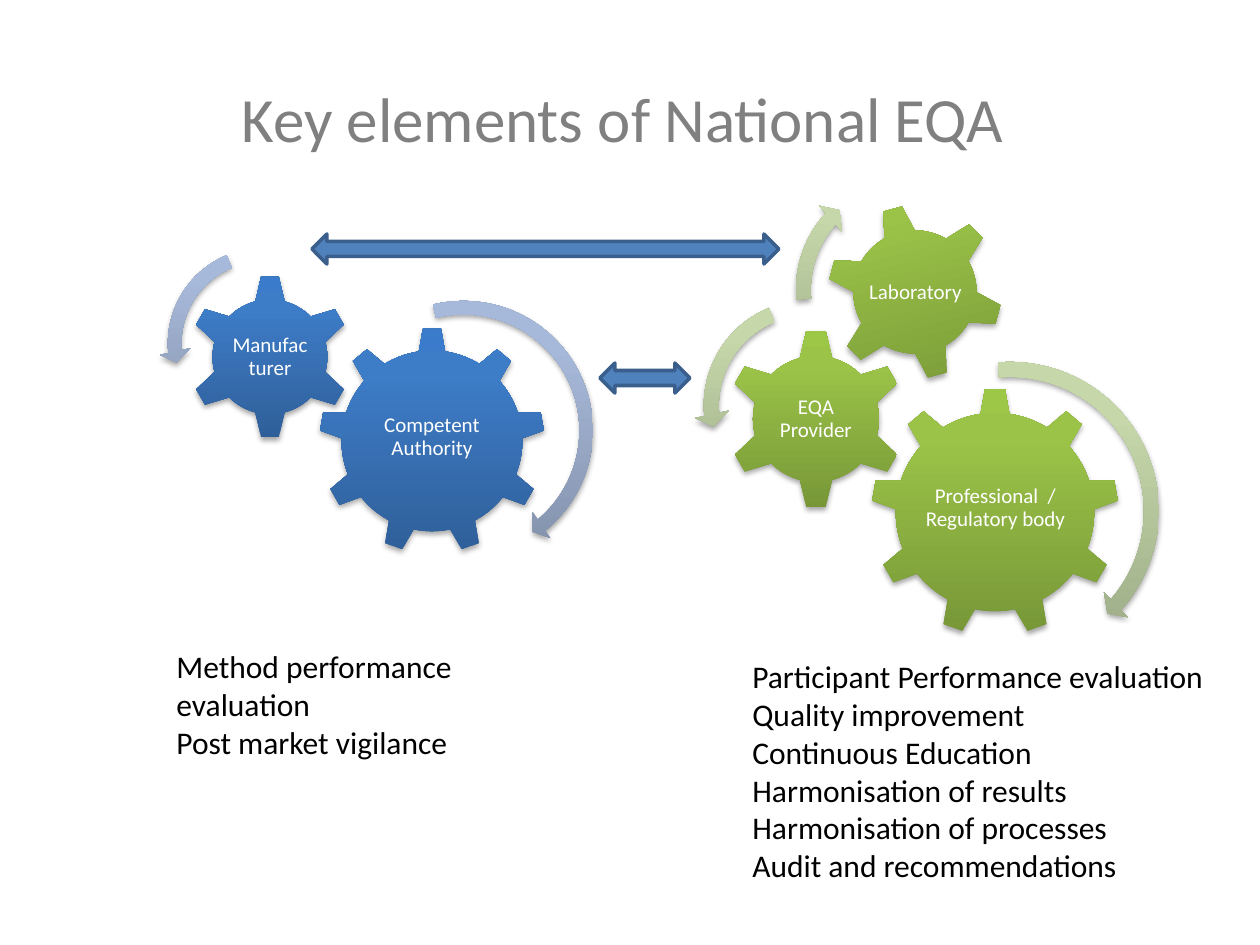
import copy

import pptx
import pptx.dml.color
import pptx.enum.shapes
import pptx.enum.text
import pptx.oxml
import pptx.oxml.ns
import pptx.util

SHAPES = pptx.enum.shapes.MSO_SHAPE
ALIGN = pptx.enum.text.PP_ALIGN
ANCHOR = pptx.enum.text.MSO_ANCHOR
PX_PER_INCH = 126

# Gradient colours from bottom to top, at STOPS
STOPS = (0, 0.8, 1)
GREEN, PALE_GREEN = ("779737", "9BC348", "9DC746"), ("98A683", "C6D8AA", "C7DAAA")
BLUE, PALE_BLUE = ("2F5F99", "3D7CC7", "3A7CCB"), ("818FA8", "A7B9DA", "A7BADC")

# Label area as fractions of the gear: left, top, width, height
NINE_TEETH = (0.2, 0.23, 0.6, 0.51)
SIX_TEETH = (0.25, 0.25, 0.5, 0.5)
TILTED = (0.22, 0.22, 0.56, 0.56)

# Left, top, size, preset, rotation, label area, label
GREEN_GEARS = [
    (871, 388, 248, SHAPES.GEAR_9, 0, NINE_TEETH, "Professional  / Regulatory body"),
    (726, 329, 180, SHAPES.GEAR_6, 0, SIX_TEETH, "EQA Provider"),
    (827, 204, 176, SHAPES.GEAR_6, 345, TILTED, "Laboratory"),
]
BLUE_GEARS = [
    (319, 328, 226, SHAPES.GEAR_9, 0, NINE_TEETH, "Competent Authority"),
    (188, 275, 164, SHAPES.GEAR_6, 0, SIX_TEETH, "Manufacturer"),
]

# Left, top, size, preset, thickness, head angle, end, start, head width
# (angles in degrees)
GREEN_TURNS = [
    (851, 352, 318, SHAPES.CIRCULAR_ARROW, 0.047, 4.98, 41.49, 265.34, 0.055),
    (694, 290, 231, SHAPES.LEFT_CIRCULAR_ARROW, 0.065, 7.17, 174.82, 247.3, 0.075),
    (786, 166, 248, SHAPES.CIRCULAR_ARROW, 0.06, 6.57, 221.9, 175.14, 0.07),
]
BLUE_TURNS = [
    (325, 292, 277, SHAPES.CIRCULAR_ARROW, 0.049, 5.21, 50.53, 256.33, 0.057),
    (159, 239, 209, SHAPES.LEFT_CIRCULAR_ARROW, 0.065, 7.17, 174.82, 247.3, 0.075),
]


def px(length):
    return round(length * 914400 / PX_PER_INCH)


def colour(code):
    return pptx.dml.color.RGBColor.from_string(code)


def add_text(page, area, lines, size, code, align=ALIGN.LEFT, anchor=ANCHOR.TOP,
             inset=None, spacing=None):
    box = page.shapes.add_textbox(*map(px, area))
    frame = box.text_frame
    frame.word_wrap = True
    frame.vertical_anchor = anchor
    if inset is not None:
        frame.margin_left = frame.margin_right = px(inset)
        frame.margin_top = frame.margin_bottom = px(inset)
    frame.text = "\n".join(lines)
    for para in frame.paragraphs:
        para.alignment = align
        para.line_spacing = spacing
        para.font.name = "Calibri"
        para.font.size = pptx.util.Pt(size)
        para.font.color.rgb = colour(code)


def add_shaded(page, preset, left, top, size, codes):
    """Add a square shape with a three-stop gradient and a soft shadow."""
    shape = page.shapes.add_shape(preset, px(left), px(top), px(size), px(size))
    shape.line.fill.background()
    shape.fill.gradient()
    shape.fill.gradient_angle = 90
    stop_list = shape.element.spPr.find(".//" + pptx.oxml.ns.qn("a:gsLst"))
    stop_list.append(copy.deepcopy(stop_list[-1]))
    for stop, position, code in zip(shape.fill.gradient_stops, STOPS, codes):
        stop.position = position
        stop.color.rgb = colour(code)

    shape.shadow.inherit = False
    effects = shape.element.spPr.find(pptx.oxml.ns.qn("a:effectLst"))
    effects.append(pptx.oxml.parse_xml(
        f'<a:outerShdw {pptx.oxml.ns.nsdecls("a")} blurRad="40000" dist="23000" '
        'dir="5400000" rotWithShape="0"><a:srgbClr val="000000">'
        '<a:alpha val="35000"/></a:srgbClr></a:outerShdw>'))
    return shape


def add_gear(page, codes, left, top, size, preset, rotation, label_area, label):
    gear = add_shaded(page, preset, left, top, size, codes)
    gear.rotation = rotation
    x, y, width, height = (round(size * part) for part in label_area)
    add_text(page, (left + x, top + y, width, height), [label], 12, "FFFFFF",
             ALIGN.CENTER, ANCHOR.MIDDLE, inset=2, spacing=0.9)


def add_turn(page, codes, left, top, size, preset, thickness, head, end, start, width):
    turn = add_shaded(page, preset, left, top, size, codes)
    angles = [degrees * 0.6 for degrees in (head, end, start)]
    for index, value in enumerate([thickness, *angles, width]):
        turn.adjustments[index] = value


def add_double_arrow(page, left, top, width, height):
    arrow = page.shapes.add_shape(SHAPES.LEFT_RIGHT_ARROW,
                                  *map(px, (left, top, width, height)))
    arrow.shadow.inherit = False
    arrow.fill.solid()
    arrow.fill.fore_color.rgb = colour("4F81BD")
    arrow.line.color.rgb = colour("3A5F8C")
    arrow.line.width = pptx.util.Pt(2)


def main():
    deck = pptx.Presentation()
    deck.slide_width, deck.slide_height = px(1260), px(945)
    page = deck.slides.add_slide(deck.slide_layouts[6])

    # Title
    add_text(page, (63, 38, 1134, 158), ["Key elements of National EQA "], 36,
             "808080", ALIGN.CENTER, ANCHOR.MIDDLE)

    # Gear trains with their turning arrows
    for gears, gear_codes, turns, turn_codes in (
            (GREEN_GEARS, GREEN, GREEN_TURNS, PALE_GREEN),
            (BLUE_GEARS, BLUE, BLUE_TURNS, PALE_BLUE)):
        for gear in gears:
            add_gear(page, gear_codes, *gear)
        for turn in turns:
            add_turn(page, turn_codes, *turn)

    # Links between the two trains
    add_double_arrow(page, 600, 363, 90, 30)
    add_double_arrow(page, 312, 234, 467, 30)

    # Tasks under each train
    add_text(page, (740, 651, 476, 280), [
        "Participant Performance evaluation",
        "Quality improvement",
        "Continuous Education",
        "Harmonisation of results",
        "Harmonisation of processes",
        "Audit and recommendations",
    ], 18, "000000")
    add_text(page, (164, 641, 436, 127), [
        "Method performance evaluation",
        "Post market vigilance",
    ], 18, "000000")

    deck.save("out.pptx")


if __name__ == "__main__":
    main()
